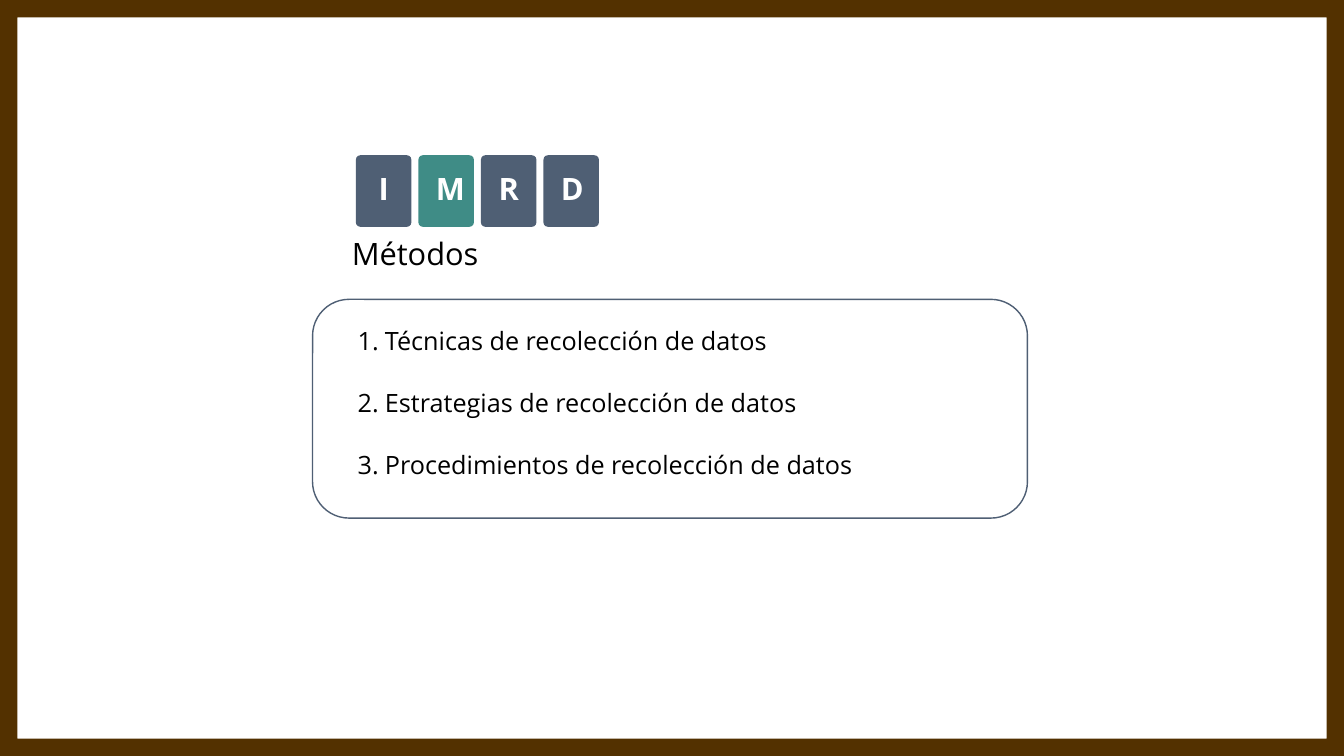
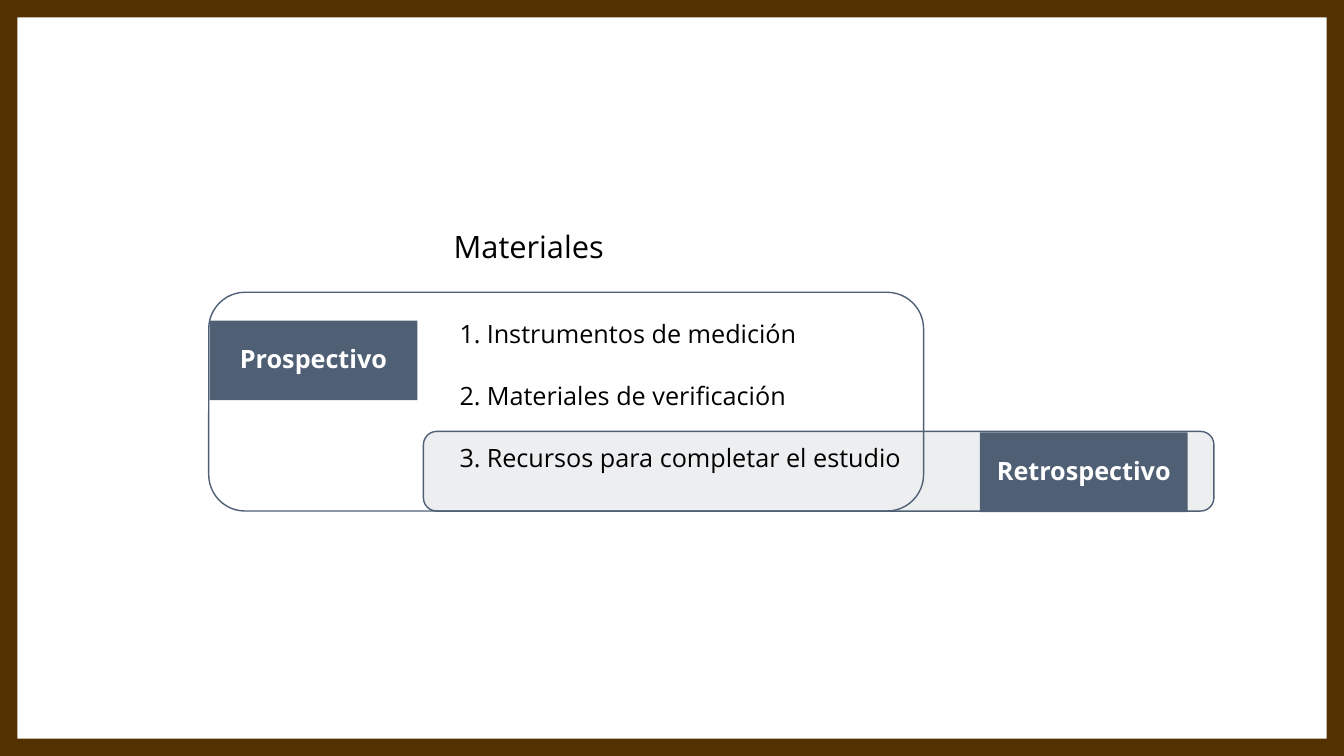
from dataclasses import dataclass
from typing import Optional

from lxml.etree import SubElement
from pptx import Presentation
from pptx.dml.color import RGBColor
from pptx.enum.shapes import MSO_SHAPE
from pptx.enum.text import MSO_ANCHOR, PP_ALIGN
from pptx.oxml.ns import qn
from pptx.shapes.autoshape import Shape
from pptx.slide import Slide
from pptx.text.text import _Paragraph as Paragraph
from pptx.util import Inches, Pt

FONT = "Open Sans"
SLATE, TEAL, BROWN = "4F5F74", "3F8C86", "533100"
WHITE, BLACK = "FFFFFF", "000000"
SLIDE_WIDTH, SLIDE_HEIGHT = 13.33, 7.5
TITLE_SIZE, BODY_SIZE = 22, 18
LINE_SPACING = 0.9


@dataclass(frozen=True)
class Box:
    left: float
    top: float
    width: float
    height: float

    def lengths(self) -> tuple:
        return tuple(Inches(v) for v in (self.left, self.top, self.width, self.height))


@dataclass(frozen=True)
class Tile:
    letter: str
    color: str


@dataclass(frozen=True)
class Label:
    text: str
    box: Box


IMRD_TILES = [Tile("I", SLATE), Tile("M", TEAL), Tile("R", SLATE), Tile("D", SLATE)]
FIRST_TILE = Box(3.53, 1.54, 0.55, 0.71)
TILE_PITCH = 0.62

METHODS = [
    "Técnicas de recolección de datos",
    "Estrategias de recolección de datos",
    "Procedimientos de recolección de datos",
]
MATERIALS = [
    "Instrumentos de medición",
    "Materiales de verificación",
    "Recursos para completar el estudio",
]
STUDY_LABELS = [
    Label("Prospectivo", Box(2.08, 3.18, 2.06, 0.79)),
    Label("Retrospectivo", Box(9.72, 4.29, 2.06, 0.79)),
]


def rgb(color: str) -> RGBColor:
    return RGBColor.from_string(color)


def style_text(paragraph: Paragraph, size: int, color: str, bold: bool = False) -> None:
    paragraph.line_spacing = LINE_SPACING
    for run in paragraph.runs:
        run.font.name = FONT
        run.font.size = Pt(size)
        run.font.bold = bold
        run.font.color.rgb = rgb(color)


def add_panel(slide: Slide, kind: MSO_SHAPE, box: Box, fill: Optional[str] = None,
              line: Optional[str] = None, opacity: int = 100) -> Shape:
    """Add a flat preset shape; opacity is the percentage for its fill."""
    panel = slide.shapes.add_shape(kind, *box.lengths())
    panel.shadow.inherit = False
    if fill:
        panel.fill.solid()
        panel.fill.fore_color.rgb = rgb(fill)
        if opacity < 100:
            color = panel.fill._xPr.find(qn("a:solidFill")).find(qn("a:srgbClr"))
            SubElement(color, qn("a:alpha"), val=str(opacity * 1000))
    else:
        panel.fill.background()
    if line:
        panel.line.color.rgb = rgb(line)
        panel.line.width = Pt(1)
    else:
        panel.line.fill.background()
    return panel


def write_centered(panel: Shape, text: str, size: int, side_inset: float) -> None:
    frame = panel.text_frame
    frame.margin_left = frame.margin_right = Inches(side_inset)
    frame.margin_top = frame.margin_bottom = 0
    frame.vertical_anchor = MSO_ANCHOR.MIDDLE
    frame.text = text
    frame.paragraphs[0].alignment = PP_ALIGN.CENTER
    style_text(frame.paragraphs[0], size, WHITE, bold=True)


def add_title(slide: Slide, text: str, left: float, top: float) -> None:
    frame = slide.shapes.add_textbox(*Box(left, top, 2.12, 0.71).lengths()).text_frame
    frame.word_wrap = True
    frame.vertical_anchor = MSO_ANCHOR.MIDDLE
    frame.margin_left = frame.margin_right = Inches(0.07)
    frame.text = text
    style_text(frame.paragraphs[0], TITLE_SIZE, BLACK)


def add_numbered_list(slide: Slide, items: list[str], left: float, top: float) -> None:
    frame = slide.shapes.add_textbox(*Box(left, top, 5.4, 1.68).lengths()).text_frame
    frame.word_wrap = True
    for index, item in enumerate(items):
        paragraph = frame.add_paragraph() if index else frame.paragraphs[0]
        paragraph.text = item
        properties = paragraph._p.get_or_add_pPr()
        properties.set("marL", str(Inches(0.46)))
        properties.set("indent", str(Inches(-0.27)))
        SubElement(properties, qn("a:buFont"), typeface=FONT)
        SubElement(properties, qn("a:buAutoNum"), type="arabicPeriod")
        if index:
            paragraph.space_before = Pt(25)
        style_text(paragraph, BODY_SIZE, BLACK)


def add_border(slide: Slide) -> None:
    border = add_panel(slide, MSO_SHAPE.FRAME, Box(0, 0, SLIDE_WIDTH, SLIDE_HEIGHT), BROWN)
    border.adjustments[0] = 0.023


def add_imrd_tiles(slide: Slide) -> None:
    for index, tile in enumerate(IMRD_TILES):
        box = Box(FIRST_TILE.left + index * TILE_PITCH, FIRST_TILE.top,
                  FIRST_TILE.width, FIRST_TILE.height)
        panel = add_panel(slide, MSO_SHAPE.ROUNDED_RECTANGLE, box, tile.color)
        panel.adjustments[0] = 0.08
        write_centered(panel, tile.letter, TITLE_SIZE, side_inset=0.16)


def build_methods(slide: Slide) -> None:
    add_panel(slide, MSO_SHAPE.ROUNDED_RECTANGLE, Box(3.1, 2.97, 7.09, 2.17), line=SLATE)
    add_title(slide, "Métodos", 3.42, 2.18)
    add_numbered_list(slide, METHODS, 3.26, 3.21)
    add_imrd_tiles(slide)
    add_border(slide)


def build_materials(slide: Slide) -> None:
    add_panel(slide, MSO_SHAPE.ROUNDED_RECTANGLE, Box(4.2, 4.28, 7.84, 0.79),
              SLATE, SLATE, opacity=10)
    add_panel(slide, MSO_SHAPE.ROUNDED_RECTANGLE, Box(2.07, 2.9, 7.09, 2.17), line=SLATE)
    for label in STUDY_LABELS:
        panel = add_panel(slide, MSO_SHAPE.RECTANGLE, label.box, SLATE)
        write_centered(panel, label.text, BODY_SIZE, side_inset=0.05)
    add_title(slide, "Materiales", 4.43, 2.11)
    add_numbered_list(slide, MATERIALS, 4.27, 3.14)
    add_border(slide)


def main() -> None:
    deck = Presentation()
    deck.slide_width = Inches(SLIDE_WIDTH)
    deck.slide_height = Inches(SLIDE_HEIGHT)
    blank = deck.slide_layouts[6]
    for build in (build_methods, build_materials):
        build(deck.slides.add_slide(blank))
    deck.save("out.pptx")


if __name__ == "__main__":
    main()
